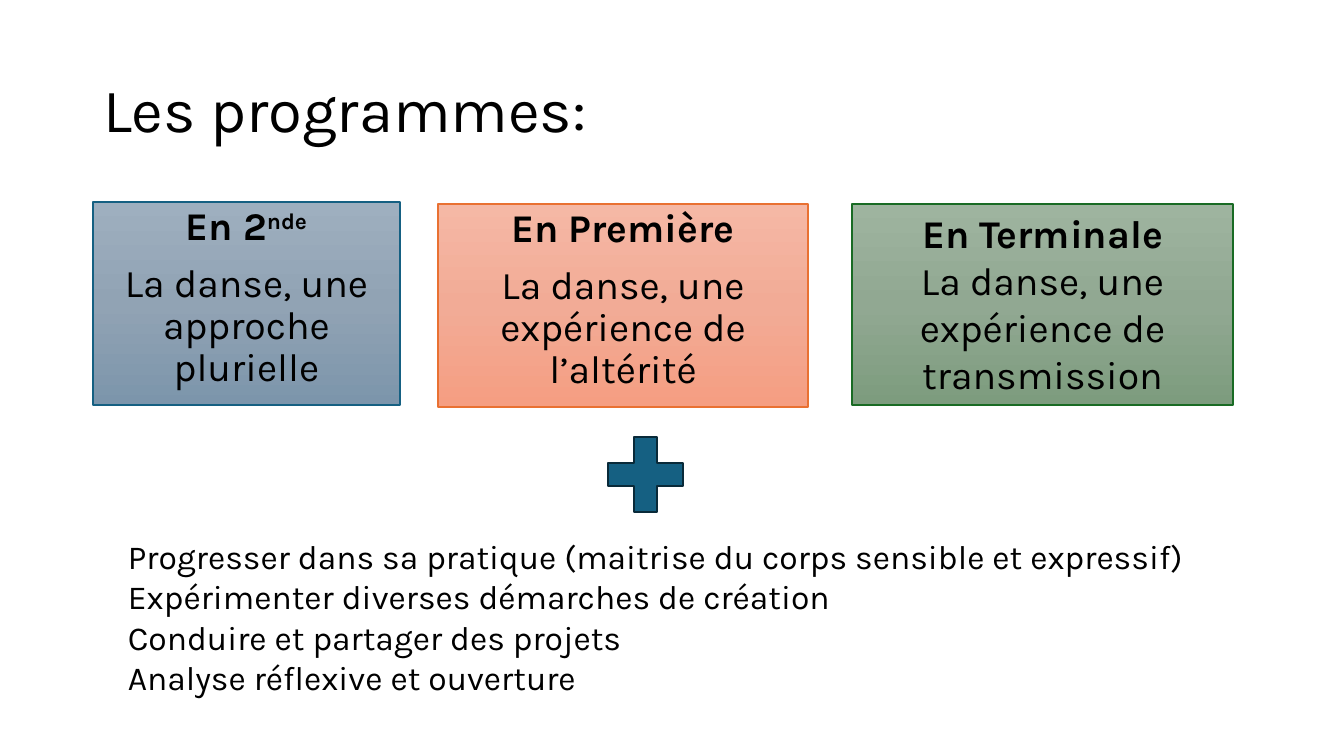
from copy import deepcopy

from pptx import Presentation
from pptx import util as u
from pptx.dml.color import RGBColor
from pptx.enum import shapes, text
from pptx.oxml.ns import qn

PX = 914400 / 100.8
FONT = "Karla"

BLACK = RGBColor(0x00, 0x00, 0x00)
BLUE = RGBColor(0x15, 0x60, 0x82)
NAVY = RGBColor(0x09, 0x2A, 0x39)
ORANGE = RGBColor(0xE9, 0x71, 0x32)
GREEN = RGBColor(0x19, 0x6B, 0x24)
BLUE_SHADES = [RGBColor(0x9E, 0xAF, 0xBF), RGBColor(0x91, 0xA3, 0xB4), RGBColor(0x7C, 0x95, 0xAB)]
ORANGE_SHADES = [RGBColor(0xF5, 0xB8, 0xA5), RGBColor(0xF2, 0xAB, 0x96), RGBColor(0xF5, 0x9E, 0x82)]
GREEN_SHADES = [RGBColor(0x9E, 0xB4, 0x9F), RGBColor(0x91, 0xA8, 0x92), RGBColor(0x7D, 0x9C, 0x7E)]

# place, gradient, outline, level, superscript, theme, line spacing, space before
LEVELS = [
    ((93, 202, 307, 203), BLUE_SHADES, BLUE, "En 2", "nde",
     "La danse, une approche plurielle", 0.9, 10),
    ((438, 204, 370, 203), ORANGE_SHADES, ORANGE, "En Première", "",
     "La danse, une expérience de l’altérité", 0.9, 10),
    ((852, 204, 381, 201), GREEN_SHADES, GREEN, "En Terminale", "",
     "La danse, une expérience de transmission", 1.0, 0),
]
GOALS = [
    "Progresser dans sa pratique (maitrise du corps sensible et expressif)",
    "Expérimenter diverses démarches de création",
    "Conduire et partager des projets",
    "Analyse réflexive et ouverture",
]


def px(*lengths):
    return [u.Emu(round(length * PX)) for length in lengths]


def add_run(paragraph, words, size, bold=False):
    run = paragraph.add_run()
    run.text = words
    run.font.name = FONT
    run.font.size = u.Pt(size)
    run.font.bold = bold
    run.font.color.rgb = BLACK
    return run


def next_paragraph(frame, index):
    """Return the first paragraph of a frame, or a new one after it."""
    return frame.add_paragraph() if index else frame.paragraphs[0]


def add_title(slide, words):
    title = slide.shapes.title
    title.left, title.top, title.width, title.height = px(93, 40, 1159, 146)
    frame = title.text_frame
    frame.auto_size = text.MSO_AUTO_SIZE.NONE
    frame.vertical_anchor = text.MSO_ANCHOR.MIDDLE
    heading = frame.paragraphs[0]
    heading.alignment = text.PP_ALIGN.LEFT
    heading.line_spacing = 0.9
    add_run(heading, words, 44)


def shade(shape, colors):
    """Fill a shape from top to bottom with evenly spaced colours."""
    shape.fill.gradient()
    shape.fill.gradient_angle = 270
    stop_list = shape.fill._xPr.find(qn("a:gradFill")).find(qn("a:gsLst"))
    stop_list.insert(1, deepcopy(stop_list[0]))
    for index, (stop, color) in enumerate(zip(shape.fill.gradient_stops, colors)):
        stop.position = index / (len(colors) - 1)
        stop.color.rgb = color


def add_outlined(slide, kind, place, outline, weight):
    shape = slide.shapes.add_shape(kind, *px(*place))
    shape.shadow.inherit = False
    shape.line.color.rgb = outline
    shape.line.width = u.Pt(weight)
    return shape


def add_level(slide, place, shades, outline, level, superscript, theme, spacing, before):
    card = add_outlined(slide, shapes.MSO_SHAPE.RECTANGLE, place, outline, 1)
    shade(card, shades)
    frame = card.text_frame
    frame.word_wrap = True
    frame.vertical_anchor = text.MSO_ANCHOR.TOP
    for index, words in enumerate((level, theme)):
        paragraph = next_paragraph(frame, index)
        paragraph.alignment = text.PP_ALIGN.CENTER
        paragraph.line_spacing = spacing
        paragraph.space_before = u.Pt(before)
        add_run(paragraph, words, 28, bold=index == 0)
    if superscript:
        ending = add_run(frame.paragraphs[0], superscript, 28, bold=True)
        ending.font._element.set("baseline", "30000")


def add_plus(slide):
    plus = add_outlined(slide, shapes.MSO_SHAPE.MATH_PLUS, (595, 424, 101, 101), NAVY, 1.5)
    plus.fill.solid()
    plus.fill.fore_color.rgb = BLUE


def add_goals(slide, goals):
    frame = slide.shapes.add_textbox(*px(118, 531, 1133, 204)).text_frame
    frame.word_wrap = True
    for index, goal in enumerate(goals):
        add_run(next_paragraph(frame, index), goal, 24)


def main():
    deck = Presentation()
    deck.slide_width, deck.slide_height = px(1344, 756)
    slide = deck.slides.add_slide(deck.slide_layouts[5])
    add_title(slide, "Les programmes:")
    for level in LEVELS:
        add_level(slide, *level)
    add_plus(slide)
    add_goals(slide, GOALS)
    deck.save("out.pptx")


if __name__ == "__main__":
    main()
